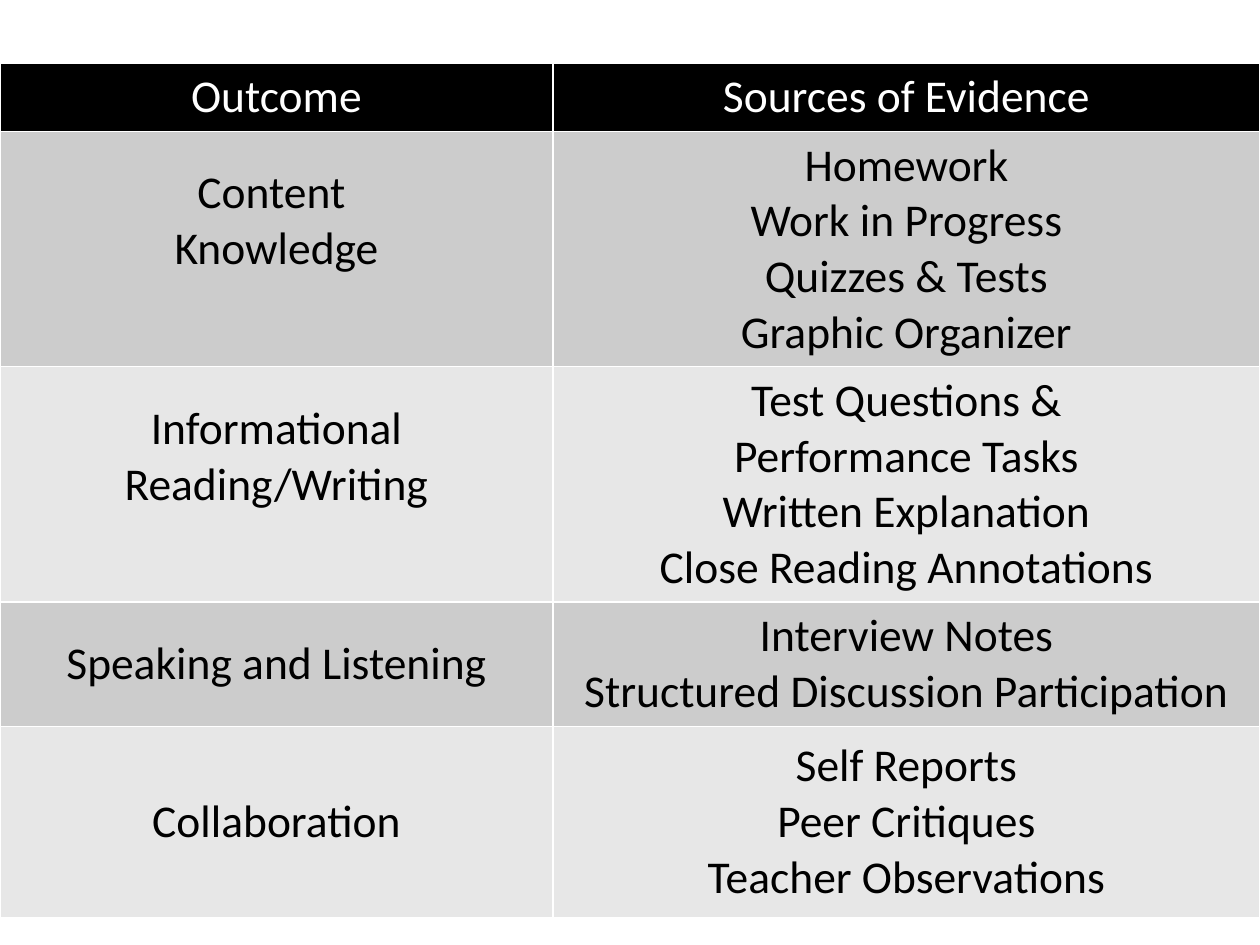
from dataclasses import dataclass

import pptx
import pptx.dml.color
import pptx.enum.text
import pptx.oxml
import pptx.oxml.ns
import pptx.util
from pptx.util import Cm


@dataclass(frozen=True)
class Theme:
    font: str = "Calibri"
    text_size: int = 26
    border_width: int = 1
    header_fill: str = "000000"
    header_text: str = "FFFFFF"
    body_text: str = "000000"
    border: str = "FFFFFF"
    bands: tuple = ("CCCCCC", "E7E7E7")


THEME = Theme()
TOP = Cm(1.27)
COLUMN_WIDTHS = (Cm(11.15), Cm(14.25))
HEADINGS = ("Outcome", "Sources of Evidence")
HEADER_HEIGHT = Cm(1.37)
RAISED = Cm(1.25)  # bottom margin that lifts an outcome by half a line
NORMAL = Cm(0.13)

# outcome lines, evidence lines, row height, bottom margin of the outcome
OUTCOMES = (
    (("Content ", "Knowledge"),
     ("Homework", "Work in Progress", "Quizzes & Tests", "Graphic Organizer"),
     Cm(4.74), RAISED),
    (("Informational", "Reading/Writing"),
     ("Test Questions &", "Performance Tasks", "Written Explanation",
      "Close Reading Annotations"),
     Cm(4.74), RAISED),
    (("Speaking and Listening",),
     ("Interview Notes", "Structured Discussion Participation"),
     Cm(2.5), NORMAL),
    (("Collaboration",),
     ("Self Reports", "Peer Critiques", "Teacher Observations"),
     Cm(3.86), NORMAL),
)


def rgb(value):
    return pptx.dml.color.RGBColor.from_string(value)


def set_borders(cell):
    properties = cell._tc.get_or_add_tcPr()
    for position, side in enumerate(("lnL", "lnR", "lnT", "lnB")):
        properties.insert(position, pptx.oxml.parse_xml(
            f'<a:{side} {pptx.oxml.ns.nsdecls("a")} '
            f'w="{pptx.util.Pt(THEME.border_width)}"><a:solidFill>'
            f'<a:srgbClr val="{THEME.border}"/></a:solidFill></a:{side}>'))


def fill_cell(cell, lines, fill, color, **cell_format):
    """Write one paragraph per line and apply the cell's look."""
    for attribute, value in cell_format.items():
        setattr(cell, attribute, value)
    cell.fill.solid()
    cell.fill.fore_color.rgb = rgb(fill)
    set_borders(cell)
    cell.text_frame.text = "\n".join(lines)
    font_format = {"name": THEME.font, "bold": False,
                   "size": pptx.util.Pt(THEME.text_size)}
    for paragraph in cell.text_frame.paragraphs:
        paragraph.alignment = pptx.enum.text.PP_ALIGN.CENTER
        font = paragraph.runs[0].font
        for attribute, value in font_format.items():
            setattr(font, attribute, value)
        font.color.rgb = rgb(color)


def add_evidence_table(slide):
    heights = [HEADER_HEIGHT] + [row[2] for row in OUTCOMES]
    evidence = slide.shapes.add_table(
        len(heights), len(COLUMN_WIDTHS), 0, TOP,
        sum(COLUMN_WIDTHS), sum(heights)).table
    for column, width in zip(evidence.columns, COLUMN_WIDTHS):
        column.width = width
    for row, height in zip(evidence.rows, heights):
        row.height = height

    for column, heading in enumerate(HEADINGS):
        fill_cell(evidence.cell(0, column), [heading],
                  THEME.header_fill, THEME.header_text)
    middle = pptx.enum.text.MSO_ANCHOR.MIDDLE
    for index, (outcome, sources, _, margin) in enumerate(OUTCOMES):
        band = THEME.bands[index % len(THEME.bands)]
        for column, (lines, bottom) in enumerate(
                ((outcome, margin), (sources, NORMAL))):
            fill_cell(evidence.cell(index + 1, column), lines, band,
                      THEME.body_text, vertical_anchor=middle,
                      margin_bottom=bottom)


def main():
    deck = pptx.Presentation()
    deck.slide_width, deck.slide_height = Cm(25.4), Cm(19.05)
    blank_layout = deck.slide_layouts[6]
    add_evidence_table(deck.slides.add_slide(blank_layout))
    deck.save("out.pptx")


if __name__ == "__main__":
    main()
